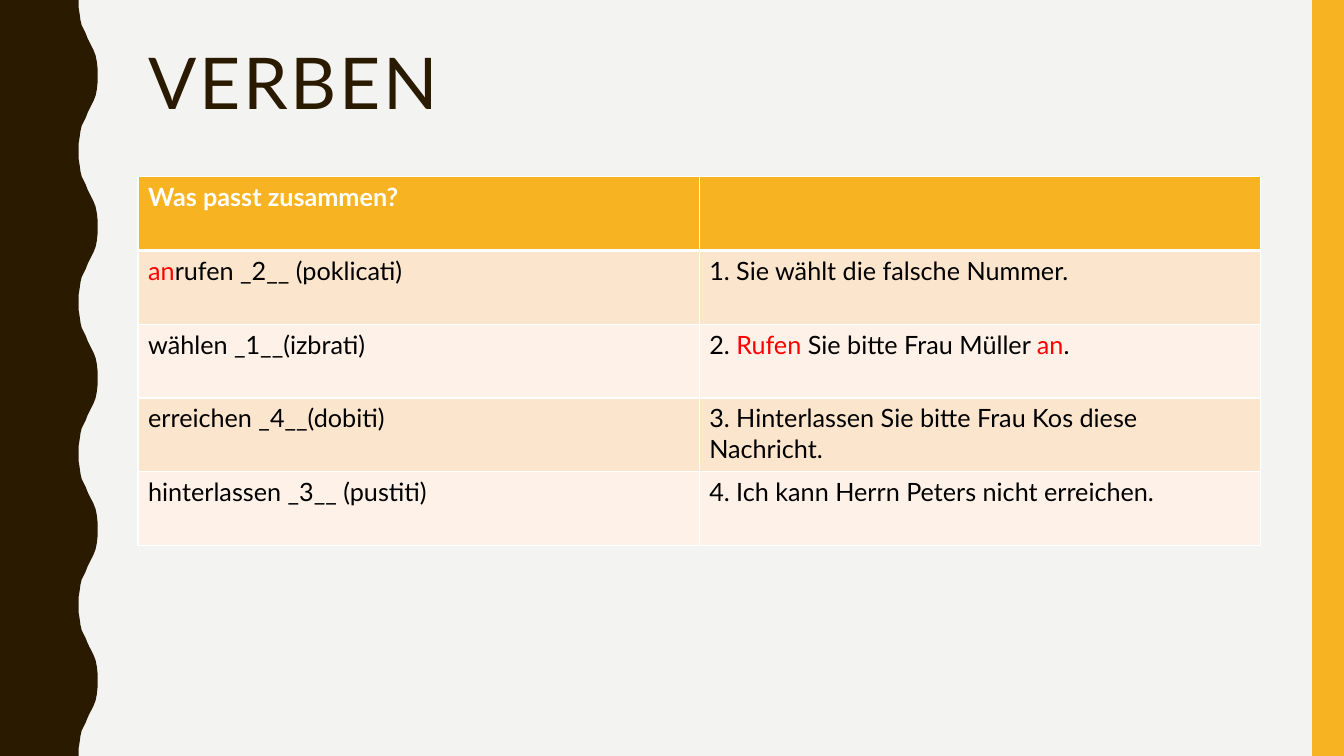
from dataclasses import dataclass
from lxml import etree
from pptx import Presentation
from pptx import util as u
from pptx.dml.color import RGBColor
from pptx.enum import shapes, text
from pptx.oxml.ns import qn


@dataclass(frozen=True)
class Theme:
    font: str = "Lato"
    title_size: float = 51
    body_size: float = 18
    paper: str = "F3F3F2"
    dark: str = "2A1A00"
    accent: str = "F8B323"
    bands: tuple = ("FCE5CD", "FEF2E8")
    white: str = "FFFFFF"
    black: str = "000000"
    red: str = "FF0000"


T = Theme()
WIDTH, HEIGHT = 33.87, 19.05
HALF_WAVES = 10
WAVE = [(1.98, 0), (1.98, 0.18), (2.01, 0.36), (2.03, 0.51), (2.06, 0.64),
        (2.11, 0.74), (2.16, 0.84), (2.21, 0.97), (2.26, 1.07), (2.31, 1.17),
        (2.36, 1.27), (2.41, 1.4), (2.44, 1.55), (2.46, 1.73), (2.46, 1.9)]
ROWS = [
    ("Was passt zusammen?", ""),
    ("|an|rufen _2__ (poklicati)", "1. Sie wählt die falsche Nummer."),
    ("wählen _1__(izbrati)", "2. |Rufen| Sie bitte Frau Müller |an|."),
    ("erreichen _4__(dobiti)",
     "3. Hinterlassen Sie bitte Frau Kos diese Nachricht."),
    ("hinterlassen _3__ (pustiti)",
     "4. Ich kann Herrn Peters nicht erreichen."),
]


def set_font(font, color, **values):
    for name, value in {"name": T.font, **values}.items():
        setattr(font, name, value)
    font.color.rgb = RGBColor.from_string(color)


def paint(sp, color):
    sp.shadow.inherit = False
    sp.fill.solid()
    sp.fill.fore_color.rgb = RGBColor.from_string(color)
    sp.line.fill.background()


def add_wave(s, left, top, height):
    half = height / HALF_WAVES
    points = [(0, 0)]
    for k in range(HALF_WAVES):
        if k % 2 == 0:
            points += [(x, k * half + y) for x, y in WAVE]
        else:
            points += [(x, (k + 1) * half - y) for x, y in reversed(WAVE)]
    points.append((0, height))
    points = [(u.Cm(left + x), u.Cm(top + y)) for x, y in points]
    builder = s.shapes.build_freeform(*points[0])
    builder.add_line_segments(points[1:], close=True)
    paint(builder.convert_to_shape(), T.dark)


def add_bar(s, left, top, width, height):
    box = map(u.Cm, (left, top, width, height))
    paint(s.shapes.add_shape(shapes.MSO_SHAPE.RECTANGLE, *box), T.accent)


def add_title(s, left, top, width, height):
    sp = s.shapes.title
    box = {"left": left, "top": top, "width": width, "height": height}
    for name, value in box.items():
        setattr(sp, name, u.Cm(value))
    tf = sp.text_frame
    layout = {"word_wrap": True, "auto_size": text.MSO_AUTO_SIZE.NONE,
              "vertical_anchor": text.MSO_ANCHOR.TOP}
    for name, value in layout.items():
        setattr(tf, name, value)
    p = tf.paragraphs[0]
    p.alignment = text.PP_ALIGN.LEFT
    p.line_spacing = 0.9
    r = p.add_run()
    r.text = "VERBEN"
    set_font(r.font, T.dark, size=u.Pt(T.title_size))
    r.font._element.set("spc", "200")


def add_borders(cell, widths):
    tc_pr = cell._tc.get_or_add_tcPr()
    for side, width in widths.items():
        ln = etree.SubElement(tc_pr, qn(f"a:ln{side}"), w=str(u.Pt(width)))
        fill = etree.SubElement(ln, qn("a:solidFill"))
        etree.SubElement(fill, qn("a:srgbClr"), val=T.white)


def fill_cell(cell, words, row):
    header = row == 0
    add_borders(cell, {"L": 1, "R": 1, "T": 3 if row == 1 else 1,
                       "B": 3 if header else 1})
    cell.fill.solid()
    color = T.accent if header else T.bands[(row - 1) % 2]
    cell.fill.fore_color.rgb = RGBColor.from_string(color)
    p = cell.text_frame.paragraphs[0]
    set_font(p.font, T.black, size=u.Pt(T.body_size))
    for i, part in enumerate(words.split("|")):
        if part:
            r = p.add_run()
            r.text = part
            plain = T.white if header else T.black
            set_font(r.font, T.red if i % 2 else plain,
                     size=u.Pt(T.body_size), bold=header)


def add_verb_table(s, left, top, width, height):
    box = map(u.Cm, (left, top, width, height))
    table = s.shapes.add_table(len(ROWS), len(ROWS[0]), *box).table
    for i, row in enumerate(ROWS):
        for j, words in enumerate(row):
            fill_cell(table.cell(i, j), words, i)


def main():
    prs = Presentation()
    prs.slide_width, prs.slide_height = u.Cm(WIDTH), u.Cm(HEIGHT)
    s = prs.slides.add_slide(prs.slide_layouts[5])
    s.background.fill.solid()
    s.background.fill.fore_color.rgb = RGBColor.from_string(T.paper)
    add_wave(s, 0, 0, HEIGHT)
    add_bar(s, WIDTH - 0.8, 0, 0.8, HEIGHT)
    add_title(s, 3.48, 1.07, 28.28, 4.14)
    add_verb_table(s, 3.48, 4.45, 28.28, 9.3)
    prs.save("out.pptx")


if __name__ == "__main__":
    main()
